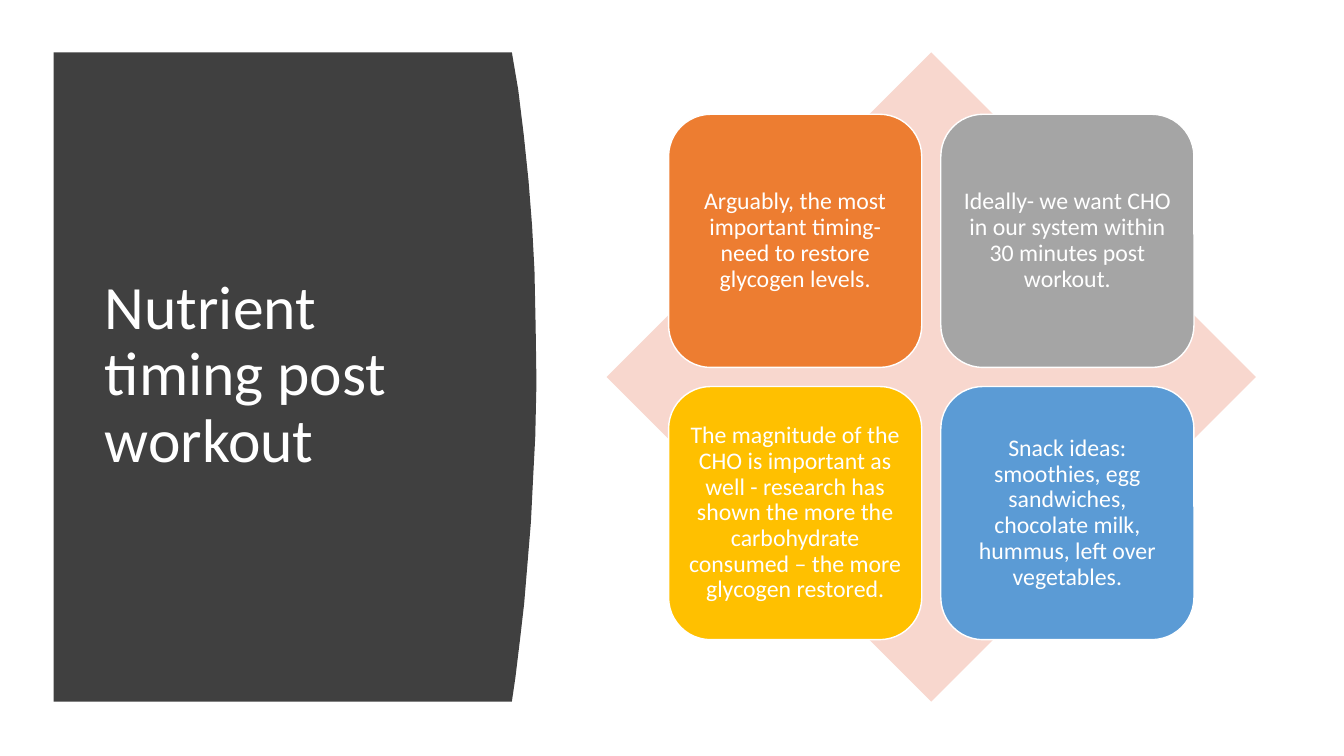
from pptx import Presentation
from pptx import util as u
from pptx.dml.color import RGBColor
from pptx.enum import shapes, text

TITLE = "Nutrient timing post workout"
CARDS = [
    ("Arguably, the most important timing- need to restore glycogen levels.", "orange"),
    ("Ideally- we want CHO in our system within 30 minutes post workout.", "grey"),
    ("The magnitude of the CHO is important as well - research has shown the more "
     "the carbohydrate consumed – the more glycogen restored.", "yellow"),
    ("Snack ideas: smoothies, egg sandwiches, chocolate milk, hummus, "
     "left over vegetables.", "blue"),
]
COLORS = {
    "panel": "404040", "diamond": "F8D7CE", "white": "FFFFFF",
    "orange": "ED7D31", "grey": "A5A5A5", "yellow": "FFC000", "blue": "5B9BD5",
}
FONT = "Calibri"

# Lengths in centimetres
PANEL_LEFT, PANEL_TOP, PANEL_BOTTOM = 1.35, 1.32, 17.68
PANEL_CURVE = [
    (12.9, PANEL_TOP), (13.06, 2.26), (13.2, 3.4), (13.32, 4.55), (13.41, 5.69),
    (13.47, 6.81), (13.5, 8.25), (13.52, 9.65), (13.49, 11), (13.44, 11.96),
    (13.38, 13.16), (13.29, 14.25), (13.21, 15.21), (13.11, 16.08),
    (12.99, 17.07), (12.9, PANEL_BOTTOM),
]
DIAMOND_LEFT, DIAMOND_SIZE = 15.29, 16.36
CARD_SIZE, CARD_GAP, CARD_INSET = 6.38, 0.48, 0.18


def color(name):
    return RGBColor.from_string(COLORS[name])


def paint(shape, fill, line=None):
    shape.shadow.inherit = False
    shape.fill.solid()
    shape.fill.fore_color.rgb = color(fill)
    if line:
        shape.line.color.rgb = color(line)
        shape.line.width = u.Pt(1)
    else:
        shape.line.fill.background()


def write(shape, words, size, alignment):
    frame = shape.text_frame
    frame.text = words
    frame.word_wrap = True
    frame.auto_size = text.MSO_AUTO_SIZE.NONE
    frame.vertical_anchor = text.MSO_ANCHOR.MIDDLE
    paragraph = frame.paragraphs[0]
    paragraph.alignment = alignment
    paragraph.line_spacing = 0.9
    paragraph.font.name = FONT
    paragraph.font.size = u.Pt(size)
    paragraph.font.color.rgb = color("white")


presentation = Presentation()
presentation.slide_width, presentation.slide_height = u.Cm(33.87), u.Cm(19.05)
slide = presentation.slides.add_slide(presentation.slide_layouts[5])

# Title
title = slide.shapes.title
title.left, title.top, title.width, title.height = map(u.Cm, (2.39, 2.82, 9.5, 13.31))
write(title, TITLE, 44, text.PP_ALIGN.LEFT)

# Dark panel with a curved right edge, behind the title
outline = [(u.Cm(x), u.Cm(y)) for x, y in PANEL_CURVE + [(PANEL_LEFT, PANEL_BOTTOM)]]
builder = slide.shapes.build_freeform(u.Cm(PANEL_LEFT), u.Cm(PANEL_TOP))
builder.add_line_segments(outline, close=True)
panel = builder.convert_to_shape()
paint(panel, "panel")
title._element.addprevious(panel._element)

# Diamond
diamond = slide.shapes.add_shape(
    shapes.MSO_SHAPE.DIAMOND, u.Cm(DIAMOND_LEFT), u.Cm(PANEL_TOP),
    u.Cm(DIAMOND_SIZE), u.Cm(DIAMOND_SIZE))
paint(diamond, "diamond")

# Two by two cards, centred on the diamond
margin = (DIAMOND_SIZE - 2 * CARD_SIZE - CARD_GAP) / 2
pitch = CARD_SIZE + CARD_GAP
for index, (words, fill) in enumerate(CARDS):
    row, column = divmod(index, 2)
    card = slide.shapes.add_shape(
        shapes.MSO_SHAPE.ROUNDED_RECTANGLE,
        u.Cm(DIAMOND_LEFT + margin + column * pitch),
        u.Cm(PANEL_TOP + margin + row * pitch),
        u.Cm(CARD_SIZE), u.Cm(CARD_SIZE))
    paint(card, fill, "white")
    write(card, words, 17, text.PP_ALIGN.CENTER)
    frame = card.text_frame
    frame.margin_left = frame.margin_right = u.Cm(CARD_INSET)
    frame.margin_top = frame.margin_bottom = u.Cm(CARD_INSET)

presentation.save("out.pptx")
